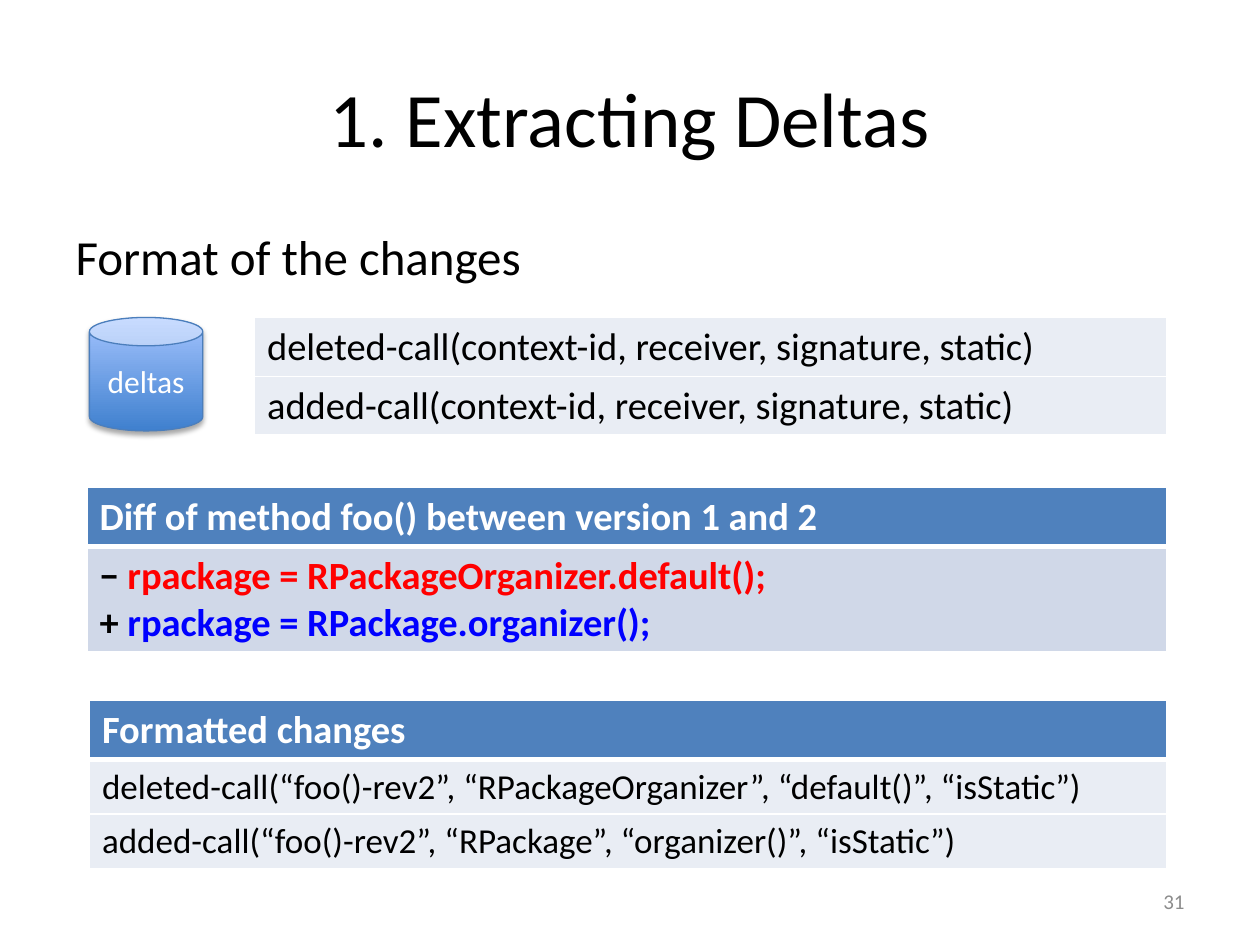
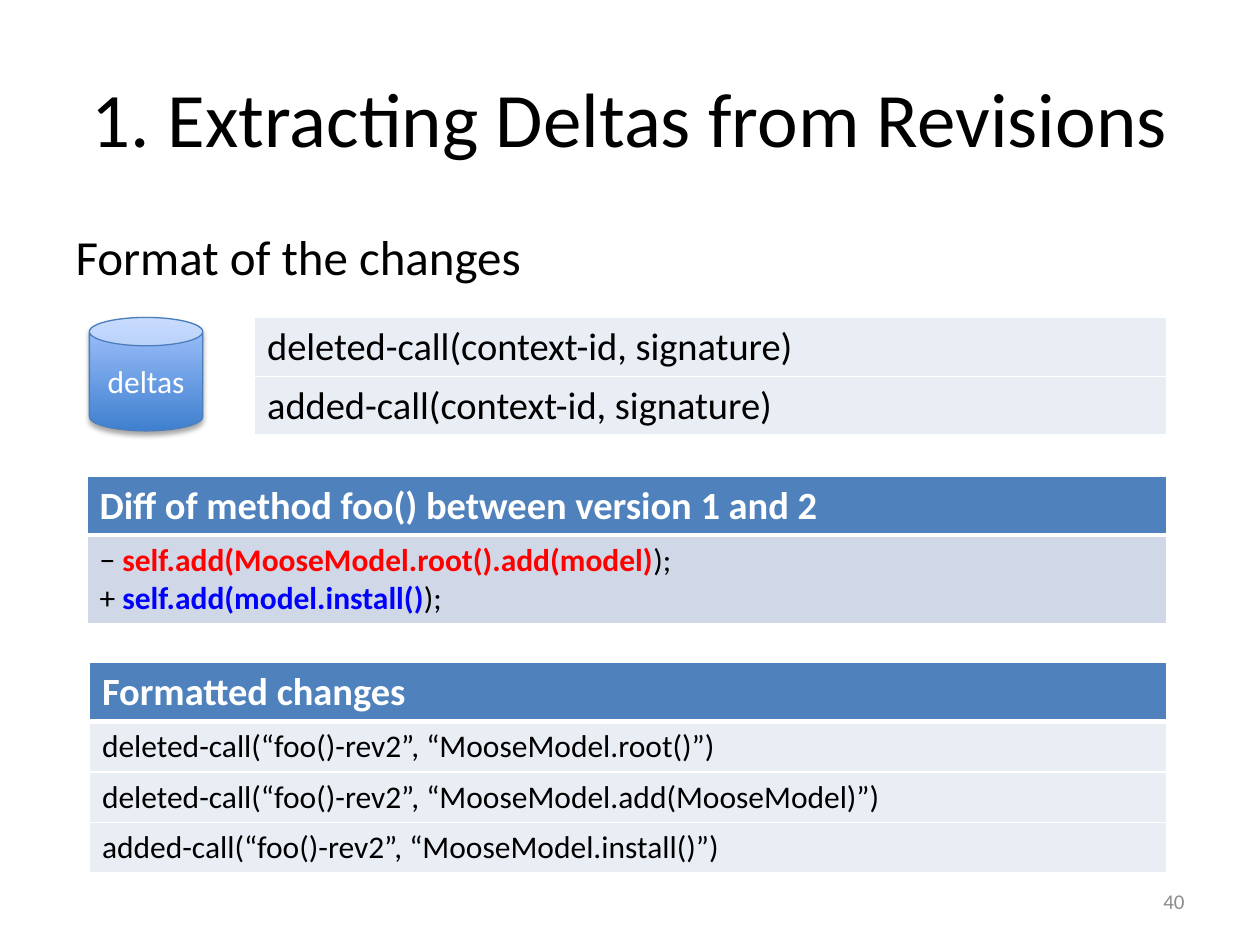
from pptx import Presentation
from pptx.dml.color import RGBColor
from pptx.enum.shapes import MSO_SHAPE
from pptx.enum.text import MSO_ANCHOR, PP_ALIGN
from pptx.oxml.ns import qn
from pptx.util import Inches, Pt
from lxml.etree import SubElement

FONT = "Calibri"
BLACK, WHITE, GREY = "000000", "FFFFFF", "8C8C8C"
RED, BLUE = "FF0000", "0000FF"
HEADER_FILL, DIFF_FILL, CALL_FILL = "4F81BD", "D0D8E8", "E9EDF4"
CAN_DARK, CAN_LIGHT, CAN_LINE = "3F80CE", "A4C4FF", "4B7EBC"

LEFT, RIGHT = 0.71, 9.26
FORMAT_LEFT, FORMAT_TOP = 2.02, 2.52
CAN_SIZE = 0.9
HEADING_SIZE = 22
THIN, THICK = 1, 3

SUBTITLE = "Format of the changes"
DIFF_HEADING = "Diff of method foo() between version 1 and 2"
CHANGES_HEADING = "Formatted changes"

# Diff lines are lists of (text, colour, bold) segments.
SLIDES = [
    {
        "title": "1. Extracting Deltas",
        "number": "31",
        "formats": [
            "deleted-call(context-id, receiver, signature, static)",
            "added-call(context-id, receiver, signature, static)",
        ],
        "diff_top": 3.87,
        "diff_size": 22,
        "diff": [
            [("− ", BLACK, True), ("rpackage = RPackageOrganizer.default();", RED, True)],
            [("+ ", BLACK, True), ("rpackage = RPackage.organizer();", BLUE, True)],
        ],
        "changes_top": 5.56,
        "changes_size": 20,
        "changes": [
            "deleted-call(“foo()-rev2”, “RPackageOrganizer”, “default()”, “isStatic”)",
            "added-call(“foo()-rev2”, “RPackage”, “organizer()”, “isStatic”)",
        ],
    },
    {
        "title": "1. Extracting Deltas from Revisions",
        "number": "40",
        "formats": [
            "deleted-call(context-id, signature)",
            "added-call(context-id, signature)",
        ],
        "diff_top": 3.78,
        "diff_size": 18,
        "diff": [
            [("− ", BLACK, False), ("self.add(MooseModel.root().add(model)", RED, True),
             (");", BLACK, False)],
            [("+ ", BLACK, False), ("self.add(model.install()", BLUE, True),
             (");", BLACK, False)],
        ],
        "changes_top": 5.26,
        "changes_size": 18,
        "changes": [
            "deleted-call(“foo()-rev2”, “MooseModel.root()”)",
            "deleted-call(“foo()-rev2”, “MooseModel.add(MooseModel)”)",
            "added-call(“foo()-rev2”, “MooseModel.install()”)",
        ],
    },
]


def rgb(color):
    return RGBColor.from_string(color)


def set_font(font, size, color, bold=False):
    font.name, font.size, font.bold = FONT, Pt(size), bold
    font.color.rgb = rgb(color)


def plain_row(text, size):
    return {"lines": [[(text, BLACK, False)]], "size": size, "fill": CALL_FILL}


def header_row(text):
    return {"lines": [[(text, WHITE, True)]], "size": HEADING_SIZE, "fill": HEADER_FILL}


def row_height(row):
    """Height in inches of the text lines plus the cell's top and bottom margins."""
    return len(row["lines"]) * row["size"] * 1.2 / 72 + 0.1


def set_borders(cell, top, bottom):
    properties = cell._tc.get_or_add_tcPr()
    for side, width in (("L", THIN), ("R", THIN), ("T", top), ("B", bottom)):
        line = SubElement(properties, qn(f"a:ln{side}"), w=str(Pt(width)))
        SubElement(SubElement(line, qn("a:solidFill")), qn("a:srgbClr"), val=WHITE)


def fill_cell(cell, row):
    cell.fill.solid()
    cell.fill.fore_color.rgb = rgb(row["fill"])
    for index, segments in enumerate(row["lines"]):
        text_frame = cell.text_frame
        paragraph = text_frame.add_paragraph() if index else text_frame.paragraphs[0]
        for text, color, bold in segments:
            run = paragraph.add_run()
            run.text = text
            set_font(run.font, row["size"], color, bold)


def add_call_table(slide, left, top, rows):
    heights = [Inches(row_height(row)) for row in rows]
    table = slide.shapes.add_table(
        len(rows), 1, Inches(left), Inches(top), Inches(RIGHT - left), sum(heights)).table
    table.first_row = rows[0]["fill"] == HEADER_FILL
    table.horz_banding = False
    edge = THIN
    for index, row in enumerate(rows):
        table.rows[index].height = heights[index]
        cell = table.cell(index, 0)
        top_edge, edge = edge, THICK if row["fill"] == HEADER_FILL else THIN
        set_borders(cell, top_edge, edge)
        fill_cell(cell, row)


def add_deltas_can(slide):
    can = slide.shapes.add_shape(MSO_SHAPE.CAN, Inches(LEFT), Inches(FORMAT_TOP),
                                 Inches(CAN_SIZE), Inches(CAN_SIZE))
    can.fill.gradient()
    can.fill.gradient_angle = 90
    for stop, color in zip(can.fill.gradient_stops, (CAN_DARK, CAN_LIGHT)):
        stop.color.rgb = rgb(color)
    can.line.color.rgb = rgb(CAN_LINE)
    can.line.width = Pt(0.75)

    can.shadow.inherit = False
    effects = can._element.spPr.find(qn("a:effectLst"))
    shadow = SubElement(effects, qn("a:outerShdw"), blurRad=str(Pt(3.1)),
                        dist=str(Pt(1.8)), dir="5400000", rotWithShape="0")
    shadow_color = SubElement(shadow, qn("a:srgbClr"), val=BLACK)
    SubElement(shadow_color, qn("a:alpha"), val="35000")

    can.text_frame.text = "deltas"
    can.text_frame.vertical_anchor = MSO_ANCHOR.MIDDLE
    paragraph = can.text_frame.paragraphs[0]
    paragraph.alignment = PP_ALIGN.CENTER
    set_font(paragraph.runs[0].font, 18, WHITE)


def add_headings(slide, title):
    body = slide.placeholders[1]
    for placeholder, text, size in ((slide.shapes.title, title, 44), (body, SUBTITLE, 28)):
        placeholder.text_frame.text = text
        set_font(placeholder.text_frame.paragraphs[0].runs[0].font, size, BLACK)
    properties = body.text_frame.paragraphs[0]._p.get_or_add_pPr()
    properties.set("marL", "0")
    properties.set("indent", "0")
    SubElement(properties, qn("a:buNone"))


def add_slide_number(slide, number):
    box = slide.shapes.add_textbox(Inches(7.17), Inches(6.95), Inches(2.33), Inches(0.4))
    text_frame = box.text_frame
    text_frame.text = number
    text_frame.word_wrap = True
    text_frame.vertical_anchor = MSO_ANCHOR.MIDDLE
    paragraph = text_frame.paragraphs[0]
    paragraph.alignment = PP_ALIGN.RIGHT
    set_font(paragraph.runs[0].font, 12, GREY)


def build_slide(presentation, content):
    slide = presentation.slides.add_slide(presentation.slide_layouts[1])
    add_headings(slide, content["title"])
    add_slide_number(slide, content["number"])
    add_call_table(slide, FORMAT_LEFT, FORMAT_TOP,
                   [plain_row(text, HEADING_SIZE) for text in content["formats"]])
    add_deltas_can(slide)
    diff = {"lines": content["diff"], "size": content["diff_size"], "fill": DIFF_FILL}
    add_call_table(slide, LEFT - 0.02, content["diff_top"], [header_row(DIFF_HEADING), diff])
    changes = [plain_row(text, content["changes_size"]) for text in content["changes"]]
    add_call_table(slide, LEFT, content["changes_top"],
                   [header_row(CHANGES_HEADING), *changes])


def main():
    presentation = Presentation()
    presentation.slide_width, presentation.slide_height = Inches(10), Inches(7.5)
    for content in SLIDES:
        build_slide(presentation, content)
    presentation.save("out.pptx")


if __name__ == "__main__":
    main()
